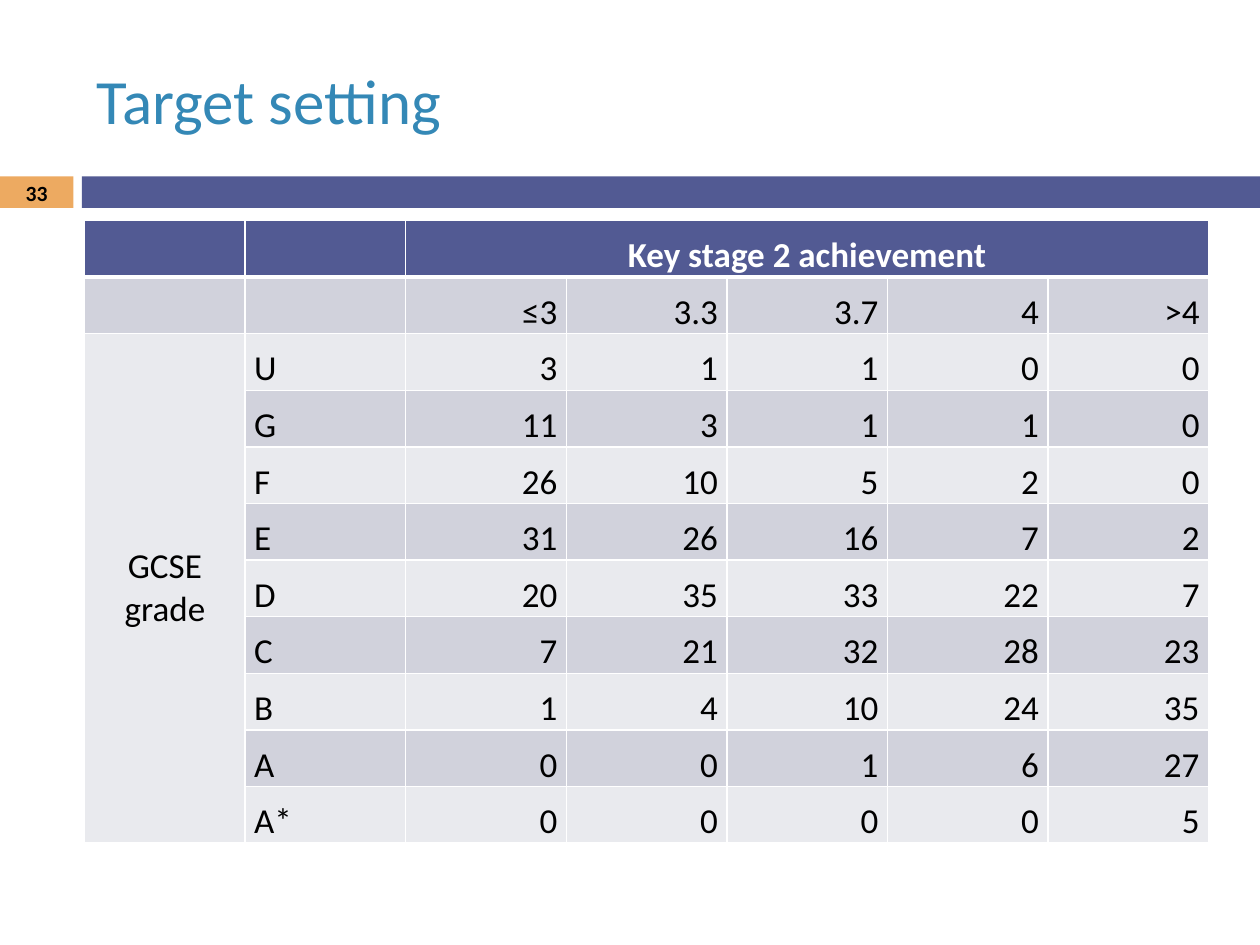
"""Build the target setting slide with its grade table."""
from dataclasses import dataclass
from typing import Optional

from lxml.etree import SubElement
from pptx import Presentation
from pptx.dml.color import RGBColor
from pptx.enum.shapes import MSO_SHAPE
from pptx.enum.text import MSO_ANCHOR, PP_ALIGN
from pptx.oxml.ns import qn
from pptx.slide import Slide
from pptx.table import _Cell
from pptx.text.text import TextFrame
from pptx.util import Pt


@dataclass(frozen=True)
class Theme:
    font: str = "Calibri"
    title: str = "3488B6"
    accent: str = "EDAA61"
    header: str = "525A93"
    dark_band: str = "D1D2DC"
    light_band: str = "E9EAEE"
    ink: str = "000000"
    white: str = "FFFFFF"
    title_size: float = 36
    number_size: float = 12.4
    table_size: float = 20


@dataclass(frozen=True)
class Area:
    left: float
    top: float
    width: float
    height: float

    def lengths(self) -> tuple[Pt, Pt, Pt, Pt]:
        return Pt(self.left), Pt(self.top), Pt(self.width), Pt(self.height)


@dataclass(frozen=True)
class Span:
    text: str
    size: float
    color: str
    bold: bool = False
    align: PP_ALIGN = PP_ALIGN.LEFT


@dataclass(frozen=True)
class Bar:
    area: Area
    color: str


@dataclass(frozen=True)
class Label:
    area: Area
    span: Span
    inset: float


@dataclass(frozen=True)
class Grade:
    name: str
    shares: tuple[int, ...]


THEME = Theme()
TABLE_AREA = Area(48.4, 126, 642.25, 355.85)
COLUMN_COUNT = 7
CELL_INSET = 5.1
LEVELS = ("≤3", "3.3", "3.7", "4", ">4")
GRADES = (
    Grade("U", (3, 1, 1, 0, 0)),
    Grade("G", (11, 3, 1, 1, 0)),
    Grade("F", (26, 10, 5, 2, 0)),
    Grade("E", (31, 26, 16, 7, 2)),
    Grade("D", (20, 35, 33, 22, 7)),
    Grade("C", (7, 21, 32, 28, 23)),
    Grade("B", (1, 4, 10, 24, 35)),
    Grade("A", (0, 0, 1, 6, 27)),
    Grade("A*", (0, 0, 0, 0, 5)),
)
BARS = (
    Bar(Area(0, 100.8, 42, 18), THEME.accent),
    Bar(Area(46.8, 100.8, 673.2, 18), THEME.header),
)
LABELS = (
    Label(Area(48, 18, 642, 78), Span("Target setting", THEME.title_size, THEME.title), 7.2),
    Label(Area(0, 100.3, 42, 19.4),
          Span("33", THEME.number_size, THEME.ink, True, PP_ALIGN.CENTER), 0),
)


def write_span(frame: TextFrame, span: Span) -> None:
    para = frame.paragraphs[0]
    para.alignment = span.align
    run = para.add_run()
    run.text = span.text
    run.font.name = THEME.font
    run.font.size = Pt(span.size)
    run.font.bold = span.bold
    run.font.color.rgb = RGBColor.from_string(span.color)


def draw_bar(page: Slide, bar: Bar) -> None:
    shape = page.shapes.add_shape(MSO_SHAPE.RECTANGLE, *bar.area.lengths())
    shape.shadow.inherit = False
    shape.fill.solid()
    shape.fill.fore_color.rgb = RGBColor.from_string(bar.color)
    shape.line.fill.background()


def draw_label(page: Slide, label: Label) -> None:
    frame = page.shapes.add_textbox(*label.area.lengths()).text_frame
    frame.word_wrap = True
    frame.vertical_anchor = MSO_ANCHOR.MIDDLE
    frame.margin_left = frame.margin_right = Pt(label.inset)
    frame.margin_top = frame.margin_bottom = Pt(0)
    write_span(frame, label.span)


def add_borders(cell: _Cell, row: int) -> None:
    properties = cell._tc.get_or_add_tcPr()
    widths = {"L": 1, "R": 1, "T": 3 if row == 1 else 1, "B": 3 if row == 0 else 1}
    for side, width in widths.items():
        line = SubElement(properties, qn(f"a:ln{side}"), w=str(Pt(width)))
        fill = SubElement(line, qn("a:solidFill"))
        SubElement(fill, qn("a:srgbClr"), val=THEME.white)


def style_cell(cell: _Cell, row: int) -> None:
    cell.margin_left = cell.margin_right = Pt(CELL_INSET)
    cell.margin_top = cell.margin_bottom = Pt(0)
    cell.vertical_anchor = MSO_ANCHOR.BOTTOM
    add_borders(cell, row)
    band = THEME.dark_band if row % 2 else THEME.light_band
    cell.fill.solid()
    cell.fill.fore_color.rgb = RGBColor.from_string(band if row else THEME.header)


def cell_span(row: int, column: int) -> Optional[Span]:
    if (row, column) == (0, 2):
        return Span("Key stage 2 achievement", THEME.table_size, THEME.white, True,
                    PP_ALIGN.CENTER)
    if (row, column) == (2, 0):
        return Span("GCSE grade", THEME.table_size, THEME.ink, align=PP_ALIGN.CENTER)
    if row == 1 and column >= 2:
        return Span(LEVELS[column - 2], THEME.table_size, THEME.ink, align=PP_ALIGN.RIGHT)
    if row >= 2 and column == 1:
        return Span(GRADES[row - 2].name, THEME.table_size, THEME.ink)
    if row >= 2 and column >= 2:
        share = GRADES[row - 2].shares[column - 2]
        return Span(str(share), THEME.table_size, THEME.ink, align=PP_ALIGN.RIGHT)
    return None


def draw_table(page: Slide) -> None:
    row_count = len(GRADES) + 2
    table = page.shapes.add_table(row_count, COLUMN_COUNT, *TABLE_AREA.lengths()).table
    for column in table.columns:
        column.width = Pt(TABLE_AREA.width / COLUMN_COUNT)
    for row in table.rows:
        row.height = Pt(TABLE_AREA.height / row_count)
    for row in range(row_count):
        for column in range(COLUMN_COUNT):
            cell = table.cell(row, column)
            style_cell(cell, row)
            span = cell_span(row, column)
            if span:
                write_span(cell.text_frame, span)
    table.cell(0, 2).merge(table.cell(0, COLUMN_COUNT - 1))
    table.cell(2, 0).merge(table.cell(row_count - 1, 0))
    table.cell(2, 0).vertical_anchor = MSO_ANCHOR.MIDDLE


def main() -> None:
    deck = Presentation()
    deck.slide_width, deck.slide_height = Pt(720), Pt(540)
    page = deck.slides.add_slide(deck.slide_layouts[6])
    for bar in BARS:
        draw_bar(page, bar)
    for label in LABELS:
        draw_label(page, label)
    draw_table(page)
    deck.save("out.pptx")


if __name__ == "__main__":
    main()
